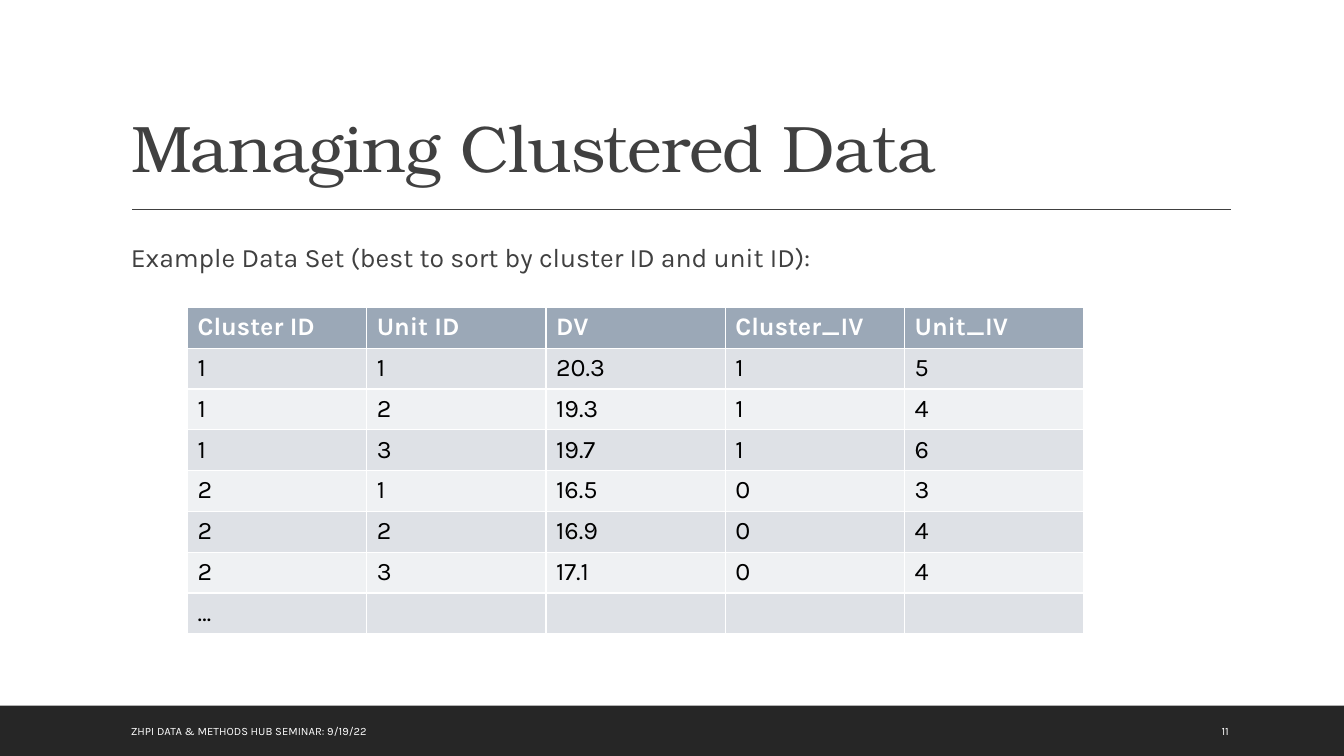
import pptx
import pptx.util
from pptx.dml.color import RGBColor
from pptx.enum.shapes import MSO_CONNECTOR, MSO_SHAPE
from pptx.enum.text import MSO_ANCHOR, MSO_AUTO_SIZE, PP_ALIGN
from pptx.oxml.xmlchemy import OxmlElement

SLIDE_WIDTH = pptx.util.Inches(13.33)
SLIDE_HEIGHT = pptx.util.Inches(7.5)

WHITE = RGBColor(0xFF, 0xFF, 0xFF)
BLACK = RGBColor(0, 0, 0)
CHARCOAL = RGBColor(0x40, 0x40, 0x40)
FOOTER_DARK = RGBColor(0x26, 0x26, 0x26)
HEADER_BLUE = RGBColor(0x9B, 0xA8, 0xB7)
BANDS = (RGBColor(0xDE, 0xE1, 0xE6), RGBColor(0xEF, 0xF1, 0xF3))

TITLE_FONT = {"name": "TeX Gyre Bonum", "size": pptx.util.Pt(47), "bold": False}
INTRO_FONT = {"name": "Karla", "size": pptx.util.Pt(19)}
CELL_FONT = {"name": "Karla", "size": pptx.util.Pt(18)}
FOOTER_FONT = {"name": "Karla", "size": pptx.util.Pt(8)}

TEXT_LEFT = 9
TEXT_WIDTH = 82.5
FOOTER_TOP = 94
FOOTER_HEIGHT = 5.33

DATA_SET = (
    ("Cluster ID", "Unit ID", "DV", "Cluster_IV", "Unit_IV"),
    ("1", "1", "20.3", "1", "5"),
    ("1", "2", "19.3", "1", "4"),
    ("1", "3", "19.7", "1", "6"),
    ("2", "1", "16.5", "0", "3"),
    ("2", "2", "16.9", "0", "4"),
    ("2", "3", "17.1", "0", "4"),
    ("…", "", "", "", ""),
)


def across(percent):
    return round(SLIDE_WIDTH * percent / 100)


def down(percent):
    return round(SLIDE_HEIGHT * percent / 100)


def area(left, top, width, height):
    """Turn percentages of the slide into a left, top, width, height tuple."""
    return across(left), down(top), across(width), down(height)


def apply(target, **values):
    for attribute, value in values.items():
        setattr(target, attribute, value)


def write(frame, wording, font, color, **paragraph_format):
    frame.text = wording
    paragraph = frame.paragraphs[0]
    apply(paragraph, **paragraph_format)
    for run in paragraph.runs:
        apply(run.font, **font)
        run.font.color.rgb = color


def add_title(slide, wording):
    title = slide.shapes.title
    bounds = area(TEXT_LEFT, 4.13, TEXT_WIDTH, 21.2)
    apply(title, **dict(zip(("left", "top", "width", "height"), bounds)))
    frame = title.text_frame
    apply(frame, vertical_anchor=MSO_ANCHOR.BOTTOM, word_wrap=True,
          auto_size=MSO_AUTO_SIZE.NONE)
    write(frame, wording, TITLE_FONT, CHARCOAL,
          alignment=PP_ALIGN.LEFT, line_spacing=0.9)
    frame.paragraphs[0].runs[0].font._element.set("spc", "-50")


def add_text(slide, bounds, wording, font, color,
             anchor=MSO_ANCHOR.TOP, **paragraph_format):
    frame = slide.shapes.add_textbox(*bounds).text_frame
    apply(frame, word_wrap=True, vertical_anchor=anchor)
    write(frame, wording, font, color, **paragraph_format)


def add_footer_band(slide):
    band = slide.shapes.add_shape(MSO_SHAPE.RECTANGLE, *area(0, 93.33, 100, 6.67))
    band.shadow.inherit = False
    band.fill.solid()
    band.fill.fore_color.rgb = FOOTER_DARK
    band.line.fill.background()


def add_title_rule(slide):
    rule = slide.shapes.add_connector(
        MSO_CONNECTOR.STRAIGHT, across(9.83), down(27.73), across(91.6), down(27.73))
    rule.line.color.rgb = CHARCOAL
    rule.line.width = pptx.util.Pt(1)
    rule._element.spPr.append(OxmlElement("a:effectLst"))


def add_data_table(slide, rows):
    table = slide.shapes.add_table(
        len(rows), len(rows[0]), *area(13.95, 40.67, 66.7, 43.2)).table
    for row_index, values in enumerate(rows):
        is_header = row_index == 0
        fill = HEADER_BLUE if is_header else BANDS[(row_index - 1) % 2]
        for column_index, value in enumerate(values):
            cell = table.cell(row_index, column_index)
            cell.fill.solid()
            cell.fill.fore_color.rgb = fill
            write(cell.text_frame, value, {**CELL_FONT, "bold": is_header},
                  WHITE if is_header else BLACK)


def main():
    deck = pptx.Presentation()
    apply(deck, slide_width=SLIDE_WIDTH, slide_height=SLIDE_HEIGHT)
    slide = deck.slides.add_slide(deck.slide_layouts.get_by_name("Title Only"))

    add_footer_band(slide)
    add_title_rule(slide)
    add_title(slide, "Managing Clustered Data")
    add_text(slide, area(TEXT_LEFT, 30.8, TEXT_WIDTH, 54.8),
             "Example Data Set (best to sort by cluster ID and unit ID):",
             INTRO_FONT, CHARCOAL, line_spacing=1.1,
             space_before=pptx.util.Pt(12), space_after=pptx.util.Pt(2))
    add_data_table(slide, DATA_SET)
    for left, width, wording in (
        (TEXT_LEFT, 55.95, "ZHPI DATA & METHODS HUB SEMINAR: 9/19/22"),
        (90.15, 6.4, "11"),
    ):
        add_text(slide, area(left, FOOTER_TOP, width, FOOTER_HEIGHT), wording,
                 FOOTER_FONT, WHITE, anchor=MSO_ANCHOR.MIDDLE)

    deck.save("out.pptx")


if __name__ == "__main__":
    main()
